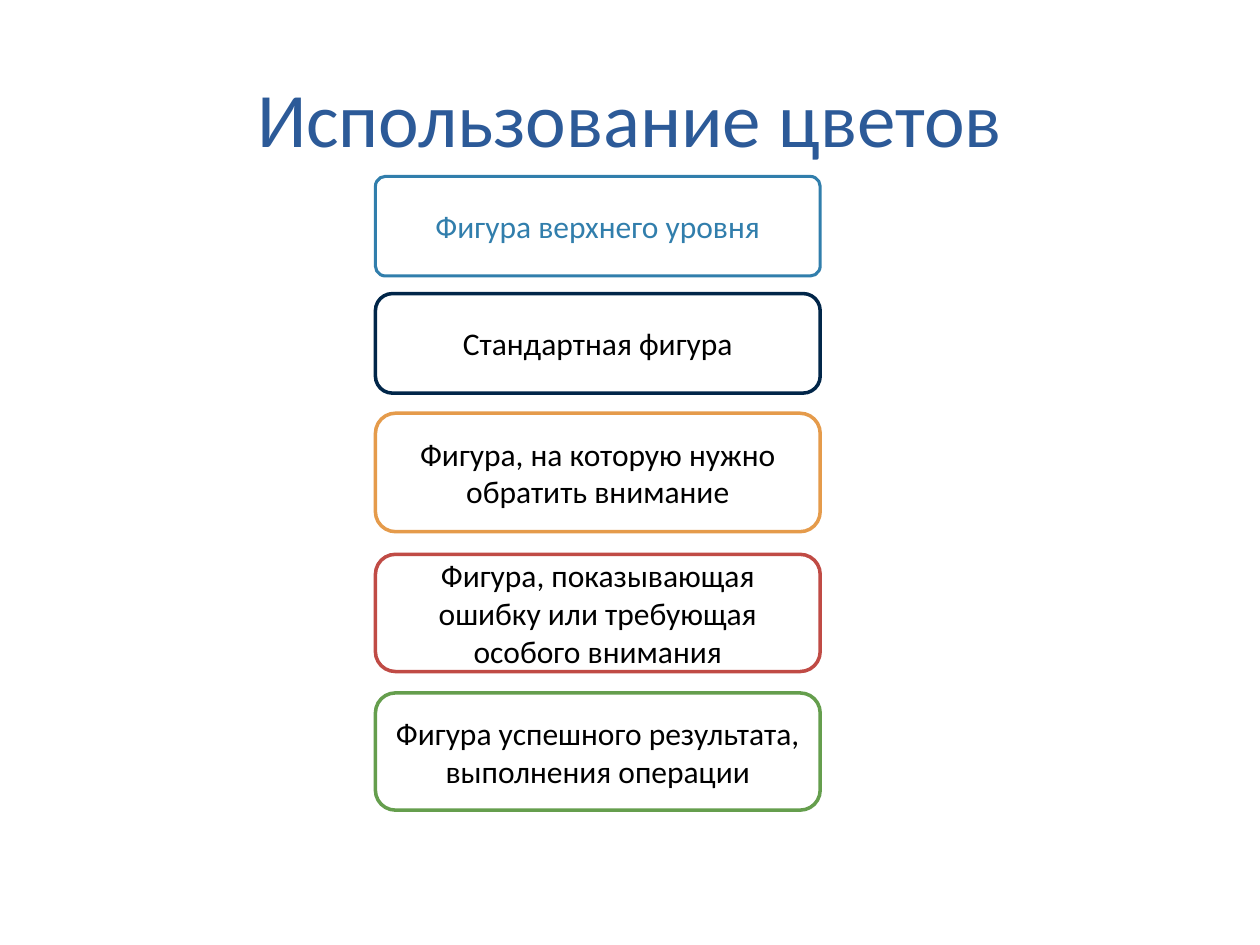
from dataclasses import dataclass

from pptx import Presentation
from pptx import util as u
from pptx.dml.color import RGBColor
from pptx.enum import shapes, text


@dataclass(frozen=True)
class Theme:
    font: str = "Calibri"
    title_size: int = 44
    label_size: int = 18
    title: str = "2C5A98"
    ink: str = "000000"
    top_level: str = "317EAC"
    standard: str = "012649"
    attention: str = "E59B4B"
    error: str = "C04B45"
    success: str = "659E4D"


THEME = Theme()
LEFT, WIDTH = 2.98, 3.53

# Label, outline colour, top, height, and any format that departs from the default
SAMPLES = [
    ("Фигура верхнего уровня", THEME.top_level, 1.4, 0.79,
     dict(color=THEME.top_level, line_width=1.75, corner=0.1, margins=(0, 0))),
    ("Стандартная фигура", THEME.standard, 2.33, 0.79, {}),
    ("Фигура, на которую нужно обратить внимание", THEME.attention, 3.28, 0.94, {}),
    ("Фигура, показывающая ошибку или требующая особого внимания",
     THEME.error, 4.4, 0.93, {}),
    ("Фигура успешного результата, выполнения операции",
     THEME.success, 5.5, 0.93, {}),
]


def write_text(box, content, *, size, color, margins=(0.1, 0.05)):
    """Fill a shape with one centred paragraph."""
    frame = box.text_frame
    frame.word_wrap = True
    frame.auto_size = text.MSO_AUTO_SIZE.NONE
    frame.vertical_anchor = text.MSO_ANCHOR.MIDDLE
    frame.margin_left = frame.margin_right = u.Inches(margins[0])
    frame.margin_top = frame.margin_bottom = u.Inches(margins[1])
    para = frame.paragraphs[0]
    para.alignment = text.PP_ALIGN.CENTER
    span = para.add_run()
    span.text = content
    span.font.name = THEME.font
    span.font.size = u.Pt(size)
    span.font.color.rgb = RGBColor.from_string(color)


def add_title(page, content):
    box = page.shapes.title
    box.left, box.top = u.Inches(0.5), u.Inches(0.3)
    box.width, box.height = u.Inches(9), u.Inches(1.25)
    write_text(box, content, size=THEME.title_size, color=THEME.title)


def add_sample(page, label, outline, top, height, *, color=THEME.ink,
               line_width=2, corner=0.17, margins=(0.1, 0.05)):
    """Add an unfilled rounded box that shows one outline colour."""
    box = page.shapes.add_shape(
        shapes.MSO_SHAPE.ROUNDED_RECTANGLE,
        u.Inches(LEFT), u.Inches(top), u.Inches(WIDTH), u.Inches(height))
    box.adjustments[0] = corner
    box.shadow.inherit = False
    box.fill.background()
    box.line.color.rgb = RGBColor.from_string(outline)
    box.line.width = u.Pt(line_width)
    write_text(box, label, size=THEME.label_size, color=color, margins=margins)


def main():
    deck = Presentation()
    deck.slide_width, deck.slide_height = u.Inches(10), u.Inches(7.5)
    page = deck.slides.add_slide(deck.slide_layouts.get_by_name("Title Only"))

    # Heading
    add_title(page, "Использование цветов")

    # Colour samples, top to bottom
    for label, outline, top, height, style in SAMPLES:
        add_sample(page, label, outline, top, height, **style)

    deck.save("out.pptx")


if __name__ == "__main__":
    main()
